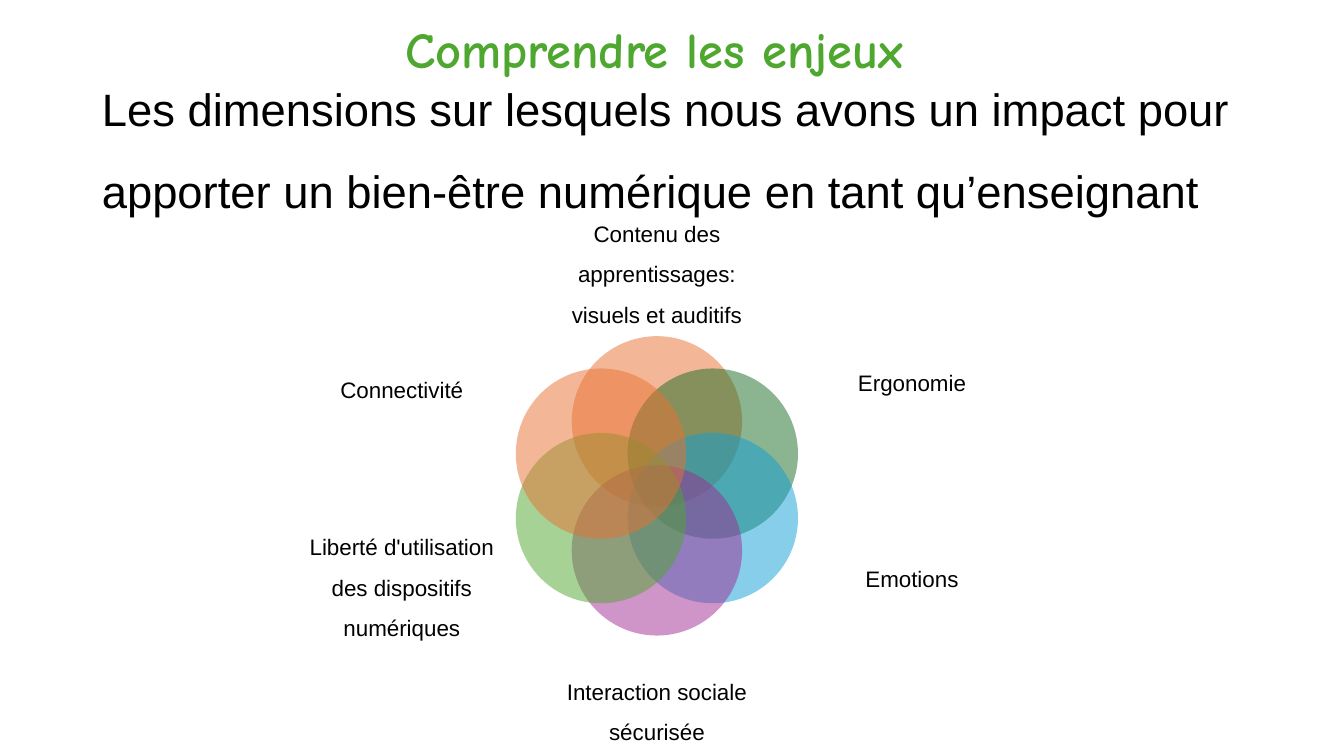
from dataclasses import dataclass
from math import cos, radians, sin

from lxml.etree import SubElement
from pptx import Presentation
from pptx.dml.color import RGBColor
from pptx.enum.shapes import MSO_SHAPE as Shape
from pptx.enum.text import MSO_ANCHOR as Anchor, MSO_AUTO_SIZE as AutoSize, PP_ALIGN as Align
from pptx.oxml.ns import qn
from pptx.util import Inches, Pt


@dataclass(frozen=True)
class Theme:
    """Colours, fonts and type sizes of the slide."""
    ink: str = "000000"
    orange: str = "E97132"
    forest: str = "196B24"
    blue: str = "0F9ED5"
    purple: str = "A02B93"
    green: str = "4EA72E"
    body_font: str = "Arial"
    display_font: str = "Comic Neue"
    display_size: float = 36
    title_size: float = 32.4
    label_size: float = 16


@dataclass(frozen=True)
class Box:
    """A region of the slide, in inches."""
    left: float
    top: float
    width: float
    height: float

    def emu(self):
        """Return the region as lengths for python-pptx."""
        return [Inches(value) for value in (self.left, self.top, self.width, self.height)]

    def centred(self, x, y, width, height):
        """Return a box whose centre is offset by x and y from this centre."""
        return Box(self.left + (self.width - width) / 2 + x,
                   self.top + (self.height - height) / 2 + y, width, height)


THEME = Theme()
HEADING_BOX = Box(3.92, 0.13, 6.58, 0.71)
TITLE_BOX = Box(0.91, 0.84, 11.5, 1.02)
DIAGRAM_BOX = Box(2.98, 2.08, 7.07, 5.48)
DIMENSIONS = [
    ("Contenu des apprentissages: visuels et auditifs", THEME.orange, 0, -2.17, 2.12, 1.5),
    ("Ergonomie", THEME.forest, 2.53, -1.01, 2.01, 0.9),
    ("Emotions", THEME.blue, 2.53, 0.94, 2.01, 0.9),
    ("Interaction sociale sécurisée", THEME.purple, 0, 2.17, 2.12, 1.5),
    ("Liberté d'utilisation des dispositifs numériques", THEME.green, -2.53, 0.94, 2.01, 1.5),
    ("Connectivité", THEME.orange, -2.53, -0.94, 2.01, 0.9),
]


def write(shape, text, size, color, font, align=Align.LEFT, spacing=1.0, bold=False):
    """Fill a shape with one formatted paragraph."""
    frame = shape.text_frame
    frame.text = text
    frame.word_wrap = True
    frame.auto_size = AutoSize.NONE
    paragraph = frame.paragraphs[0]
    paragraph.alignment = align
    paragraph.line_spacing = spacing
    run_font = paragraph.runs[0].font
    run_font.name, run_font.size, run_font.bold = font, Pt(size), bold
    run_font.color.rgb = RGBColor.from_string(color)
    return frame


def add_title(slide, box):
    """Place the statement in the title placeholder."""
    title = slide.shapes.title
    title.left, title.top, title.width, title.height = box.emu()
    frame = write(title, "Les dimensions sur lesquels nous avons un impact pour apporter "
                  "un bien-être numérique en tant qu’enseignant",
                  THEME.title_size, THEME.ink, THEME.body_font, spacing=1.5)
    frame.vertical_anchor = Anchor.MIDDLE


def add_heading(slide, box):
    """Place the section heading above the title."""
    write(slide.shapes.add_textbox(*box.emu()), "Comprendre les enjeux",
          THEME.display_size, THEME.green, THEME.display_font, bold=True)


def add_circle(slide, box, color):
    """Draw a half-transparent circle without outline."""
    circle = slide.shapes.add_shape(Shape.OVAL, *box.emu())
    circle.shadow.inherit = False
    circle.line.fill.background()
    circle.fill.solid()
    circle.fill.fore_color.rgb = RGBColor.from_string(color)
    SubElement(next(circle.element.spPr.iter(qn("a:srgbClr"))), qn("a:alpha"), val="50000")


def add_label(slide, box, text, spacing):
    """Write the centred name of one dimension."""
    frame = write(slide.shapes.add_textbox(*box.emu()), text, THEME.label_size,
                  THEME.ink, THEME.body_font, Align.CENTER, spacing)
    frame.vertical_anchor = Anchor.MIDDLE
    frame.margin_left = frame.margin_top = frame.margin_right = frame.margin_bottom = 0


def add_diagram(slide, box):
    """Draw overlapping circles around the box centre, each with its label."""
    diameter, orbit, label_height = 1.69, 0.64, 1.15
    for index, (text, color, x, y, width, spacing) in enumerate(DIMENSIONS):
        angle = radians(index * 360 / len(DIMENSIONS))
        circle_box = box.centred(orbit * sin(angle), -orbit * cos(angle), diameter, diameter)
        add_circle(slide, circle_box, color)
        add_label(slide, box.centred(x, y, width, label_height), text, spacing)


def main():
    """Build and save the presentation."""
    presentation = Presentation()
    presentation.slide_width, presentation.slide_height = Inches(13.33), Inches(7.5)
    slide = presentation.slides.add_slide(presentation.slide_layouts[5])
    add_title(slide, TITLE_BOX)
    add_diagram(slide, DIAGRAM_BOX)
    add_heading(slide, HEADING_BOX)
    presentation.save("out.pptx")


if __name__ == "__main__":
    main()
